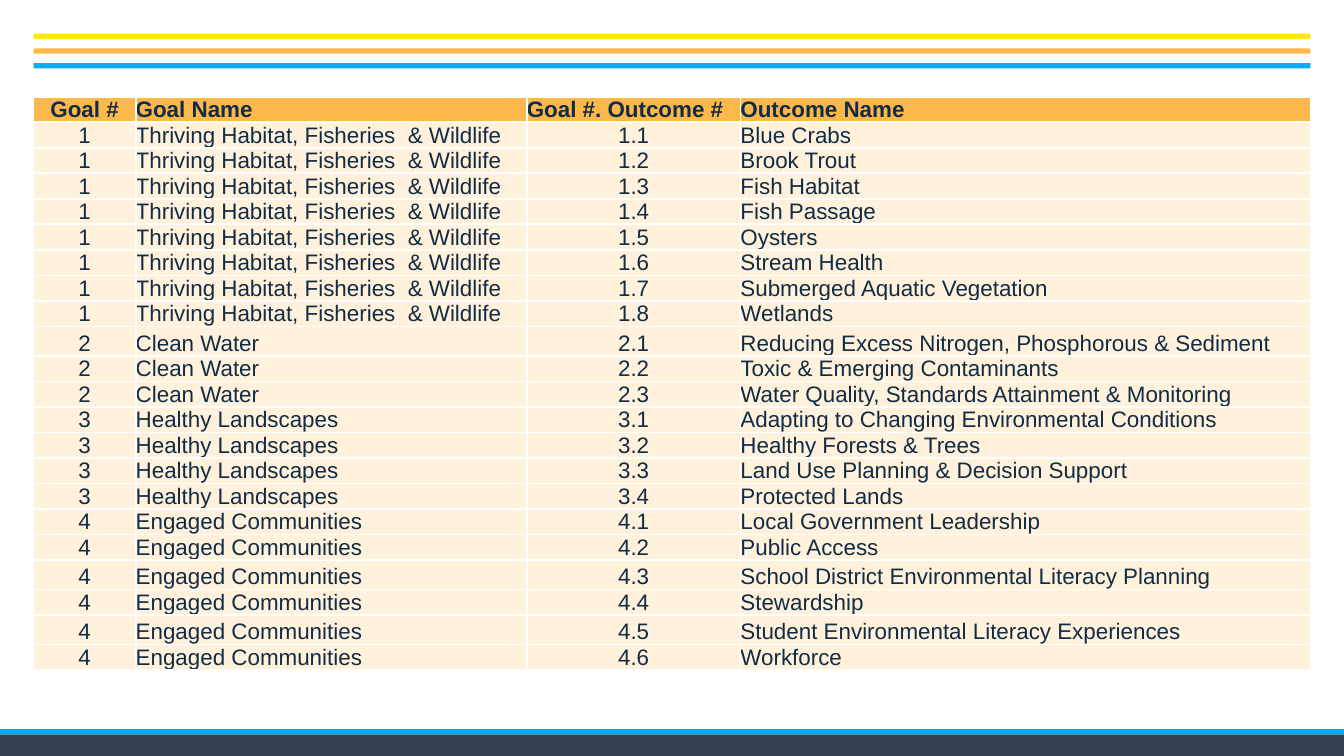
from dataclasses import dataclass

from lxml.etree import SubElement
from pptx import Presentation
from pptx.dml.color import RGBColor
from pptx.enum.shapes import MSO_SHAPE
from pptx.enum.text import MSO_ANCHOR, PP_ALIGN
from pptx.oxml.ns import qn
from pptx.util import Inches, Pt


@dataclass(frozen=True)
class Theme:
    font: str = "Arial"
    size: int = 12
    border_width: float = 1
    text: str = "112C45"
    border: str = "FFFFFF"
    header: str = "FDB84C"
    body: str = "FFF1DB"
    yellow: str = "FFE809"
    orange: str = "FDB84C"
    blue: str = "06AEEF"
    slate: str = "374151"


THEME = Theme()
SLIDE_WIDTH = 10
SLIDE_HEIGHT = SLIDE_WIDTH * 9 / 16
MARGIN = 0.25
CONTENT_WIDTH = SLIDE_WIDTH - 2 * MARGIN
STRIPE_HEIGHT, STRIPE_STEP = 0.04, 0.11
FOOTER_HEIGHT = 0.2

HEADERS = ["Goal #", "Goal Name", "Goal #. Outcome #", "Outcome Name"]
GOALS = [
    ("Thriving Habitat, Fisheries  & Wildlife", [
        "Blue Crabs", "Brook Trout", "Fish Habitat", "Fish Passage", "Oysters",
        "Stream Health", "Submerged Aquatic Vegetation", "Wetlands"]),
    ("Clean Water", [
        "Reducing Excess Nitrogen, Phosphorous & Sediment",
        "Toxic & Emerging Contaminants",
        "Water Quality, Standards Attainment & Monitoring"]),
    ("Healthy Landscapes", [
        "Adapting to Changing Environmental Conditions",
        "Healthy Forests & Trees",
        "Land Use Planning & Decision Support",
        "Protected Lands"]),
    ("Engaged Communities", [
        "Local Government Leadership", "Public Access",
        "School District Environmental Literacy Planning", "Stewardship",
        "Student Environmental Literacy Experiences", "Workforce"]),
]
COLUMN_WIDTHS = [0.76, 2.91, 1.59, 4.24]
CENTERED_HEADER_COLUMNS = {0}
CENTERED_BODY_COLUMNS = {0, 2}
ROW_HEIGHT, TALL_ROW_HEIGHT = 0.19, 0.22
TALL_OUTCOMES = {"2.1", "4.3", "4.5"}


def add_bar(slide, left, top, width, height, color):
    bar = slide.shapes.add_shape(
        MSO_SHAPE.RECTANGLE, Inches(left), Inches(top), Inches(width), Inches(height))
    bar.shadow.inherit = False
    bar.fill.solid()
    bar.fill.fore_color.rgb = RGBColor.from_string(color)
    bar.line.fill.background()


def add_footer(slide, left, top, width, height):
    add_bar(slide, left, top + STRIPE_HEIGHT, width, height - STRIPE_HEIGHT, THEME.slate)
    add_bar(slide, left, top, width, STRIPE_HEIGHT, THEME.blue)


def add_header_stripes(slide, left, top, width):
    for index, color in enumerate([THEME.yellow, THEME.orange, THEME.blue]):
        add_bar(slide, left, top + index * STRIPE_STEP, width, STRIPE_HEIGHT, color)


def add_borders(cell):
    properties = cell._tc.get_or_add_tcPr()
    for position, side in enumerate(["a:lnL", "a:lnR", "a:lnT", "a:lnB"]):
        line = SubElement(properties, qn(side), w=str(Pt(THEME.border_width)))
        fill = SubElement(line, qn("a:solidFill"))
        SubElement(fill, qn("a:srgbClr"), val=THEME.border)
        properties.insert(position, line)


def format_cell(cell, text, is_header, centered):
    cell.margin_left = cell.margin_right = cell.margin_top = cell.margin_bottom = 0
    cell.vertical_anchor = MSO_ANCHOR.BOTTOM
    cell.fill.solid()
    cell.fill.fore_color.rgb = RGBColor.from_string(
        THEME.header if is_header else THEME.body)
    add_borders(cell)
    paragraph = cell.text_frame.paragraphs[0]
    paragraph.text = text
    paragraph.alignment = PP_ALIGN.CENTER if centered else PP_ALIGN.LEFT
    font = paragraph.runs[0].font
    font.name = THEME.font
    font.size = Pt(THEME.size)
    font.bold = is_header
    font.color.rgb = RGBColor.from_string(THEME.text)


def outcome_rows():
    return [
        [str(goal), name, f"{goal}.{number}", outcome]
        for goal, (name, outcomes) in enumerate(GOALS, 1)
        for number, outcome in enumerate(outcomes, 1)
    ]


def add_outcome_table(slide, left, top, width, height):
    rows = [HEADERS] + outcome_rows()
    frame = slide.shapes.add_table(
        len(rows), len(HEADERS), Inches(left), Inches(top), Inches(width), Inches(height))
    table = frame.table
    for column, column_width in zip(table.columns, COLUMN_WIDTHS):
        column.width = Inches(column_width)
    for row_index, values in enumerate(rows):
        is_tall = values[2] in TALL_OUTCOMES
        table.rows[row_index].height = Inches(TALL_ROW_HEIGHT if is_tall else ROW_HEIGHT)
        is_header = row_index == 0
        centered_columns = CENTERED_HEADER_COLUMNS if is_header else CENTERED_BODY_COLUMNS
        for column_index, text in enumerate(values):
            format_cell(table.cell(row_index, column_index), text, is_header,
                        column_index in centered_columns)
    frame.height = Inches(height)


def main():
    presentation = Presentation()
    presentation.slide_width = Inches(SLIDE_WIDTH)
    presentation.slide_height = Inches(SLIDE_HEIGHT)
    blank_layout = presentation.slide_layouts[6]
    slide = presentation.slides.add_slide(blank_layout)
    add_footer(slide, 0, SLIDE_HEIGHT - FOOTER_HEIGHT, SLIDE_WIDTH, FOOTER_HEIGHT)
    add_header_stripes(slide, MARGIN, 0.25, CONTENT_WIDTH)
    add_outcome_table(slide, MARGIN, 0.72, CONTENT_WIDTH, 4.5)
    presentation.save("out.pptx")


if __name__ == "__main__":
    main()
